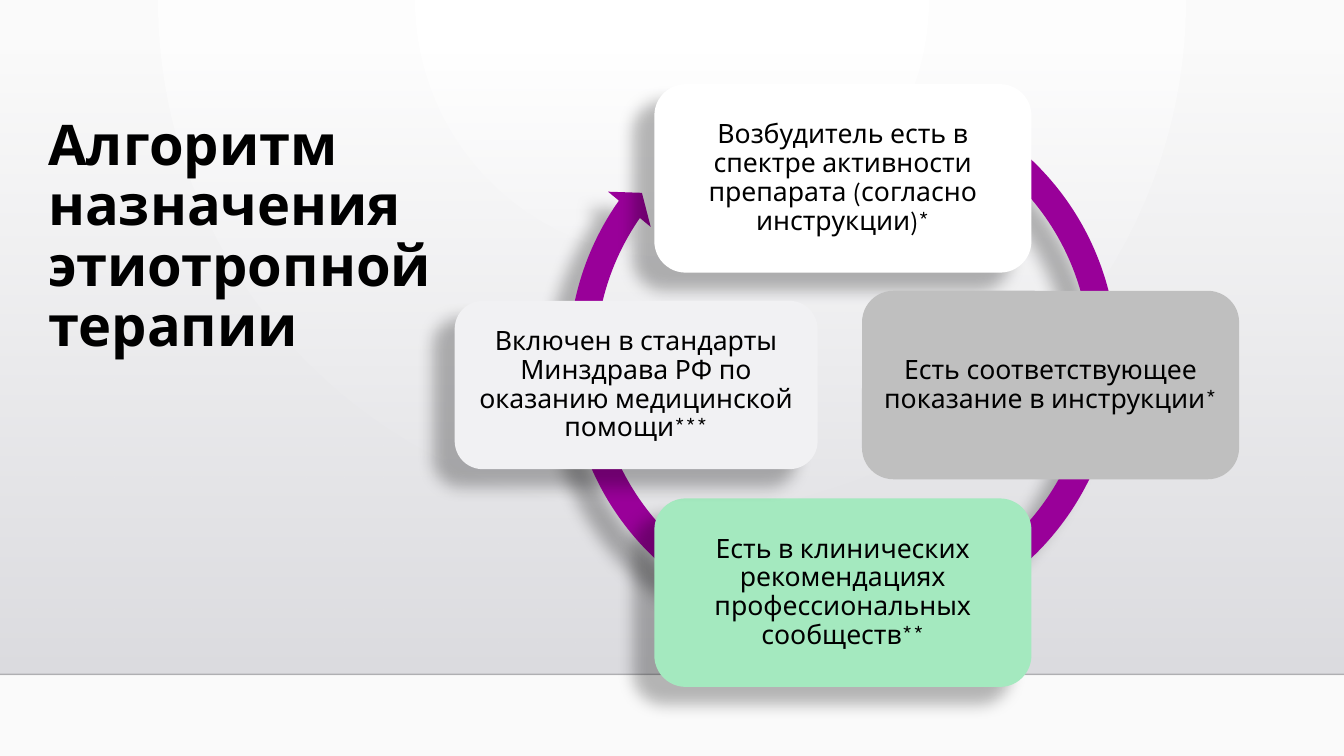
from dataclasses import dataclass

from lxml import etree
from pptx import Presentation
from pptx.dml.color import RGBColor
from pptx.enum.shapes import MSO_CONNECTOR, MSO_SHAPE
from pptx.enum.text import MSO_ANCHOR, MSO_AUTO_SIZE, PP_ALIGN
from pptx.oxml import parse_xml
from pptx.oxml.ns import nsdecls, qn
from pptx.util import Inches, Pt

ROUND_RECT = MSO_SHAPE.ROUNDED_RECTANGLE
RECT = MSO_SHAPE.RECTANGLE
CIRCULAR_ARROW = MSO_SHAPE.CIRCULAR_ARROW
STRAIGHT = MSO_CONNECTOR.STRAIGHT
LEFT, CENTER = PP_ALIGN.LEFT, PP_ALIGN.CENTER
TOP, MIDDLE = MSO_ANCHOR.TOP, MSO_ANCHOR.MIDDLE
GROW = MSO_AUTO_SIZE.SHAPE_TO_FIT_TEXT

FONT = "League Spartan"
SLIDE_W, SLIDE_H = 13.33, 7.5
HORIZON_Y = 6.69
COLORS = {
    "text": "000000",
    "ring": "990099",
    "spectrum": "FFFFFF",
    "indication": "BFBFBF",
    "guidelines": "A4E9BF",
    "standards": "F1F1F3",
    "bg_center": "FFFFFF",
    "bg_edge": "FAFAFA",
    "wall_top": "DCDCE0",
    "wall_bottom": "DEDEE2",
    "horizon": "000001",
}


@dataclass(frozen=True)
class Step:
    text: str
    color: str
    cx: float
    cy: float
    w: float = 3.74
    h: float = 1.87
    shadow: bool = True


RING_X = 8.36
STEPS = [
    Step("Возбудитель есть в спектре активности препарата (согласно инструкции)*",
         "spectrum", RING_X, 1.77),
    Step("Есть соответствующее показание в инструкции*",
         "indication", 10.42, 3.82, shadow=False),
    Step("Есть в клинических рекомендациях профессиональных сообществ**",
         "guidelines", RING_X, 5.88),
    Step("Включен в стандарты Минздрава РФ по оказанию медицинской помощи***",
         "standards", 6.31, 3.82, w=3.6, h=1.67),
]


def rgb(name: str) -> RGBColor:
    return RGBColor.from_string(COLORS[name])


def gradient(first: str, last: str, direction: str, alphas=(100, 100)):
    """Return a two-stop gradFill; direction is its a:lin or a:path element."""
    stops = "".join(
        f'<a:gs pos="{pos}"><a:srgbClr val="{COLORS[name]}">'
        f'<a:alpha val="{alpha * 1000}"/></a:srgbClr></a:gs>'
        for pos, name, alpha in zip((0, 100000), (first, last), alphas))
    return parse_xml(f'<a:gradFill {nsdecls("a")} rotWithShape="1">'
                     f'<a:gsLst>{stops}</a:gsLst>{direction}</a:gradFill>')


def replace_solid_fill(parent, fill) -> None:
    solid = parent.find(qn("a:solidFill"))
    parent.replace(solid, fill)


def add_shadow(sp) -> None:
    sp._element.spPr.append(parse_xml(
        f'<a:effectLst {nsdecls("a")}><a:outerShdw blurRad="{Pt(11.8)}" '
        f'dist="{Pt(19.7)}" dir="{141 * 60000}" algn="ctr" rotWithShape="0">'
        f'<a:srgbClr val="{COLORS["text"]}"><a:alpha val="28000"/></a:srgbClr>'
        '</a:outerShdw></a:effectLst>'))


def add_filled(slide, kind, x: float, y: float, w: float, h: float,
               color: str, shadow: bool = False):
    sp = slide.shapes.add_shape(kind, Inches(x), Inches(y), Inches(w), Inches(h))
    sp.fill.solid()
    sp.fill.fore_color.rgb = rgb(color)
    sp.line.fill.background()
    if shadow:
        add_shadow(sp)
    else:
        sp.shadow.inherit = False
    return sp


def write(sp, text: str, *, size: float, bold: bool = False, align=LEFT,
          anchor=TOP, inset_x: float = 0.1, inset_y: float = 0.05) -> None:
    tf = sp.text_frame
    tf.word_wrap = True
    tf.vertical_anchor = anchor
    tf.margin_left = tf.margin_right = Inches(inset_x)
    tf.margin_top = tf.margin_bottom = Inches(inset_y)
    p = tf.paragraphs[0]
    p.alignment = align
    p.line_spacing = 0.9
    r = p.add_run()
    r.text = text
    r.font.name = FONT
    r.font.size = Pt(size)
    r.font.bold = bold
    r.font.color.rgb = rgb("text")


def add_backdrop(slide) -> None:
    fill = slide.background.fill
    fill.solid()
    bg_pr = slide._element.cSld.find(qn("p:bg")).find(qn("p:bgPr"))
    replace_solid_fill(bg_pr, gradient(
        "bg_center", "bg_edge",
        '<a:path path="circle"><a:fillToRect l="43000" t="0" r="43000" '
        'b="100000"/></a:path>'))

    wall = add_filled(slide, RECT, 0, 0.51, SLIDE_W, HORIZON_Y - 0.51, "wall_top")
    replace_solid_fill(wall._element.spPr, gradient(
        "wall_top", "wall_bottom", '<a:lin ang="5400000" scaled="0"/>', (0, 100)))

    horizon = slide.shapes.add_connector(
        STRAIGHT, 0, Inches(HORIZON_Y), Inches(SLIDE_W), Inches(HORIZON_Y))
    horizon.line.width = Pt(1)
    horizon.line.color.rgb = rgb("horizon")
    color = horizon.line._ln.find(qn("a:solidFill"))[0]
    etree.SubElement(color, qn("a:alpha")).set("val", "20000")
    etree.SubElement(horizon._element.spPr, qn("a:effectLst"))


def add_ring(slide) -> None:
    size = 5.72
    ring = add_filled(slide, CIRCULAR_ARROW, RING_X - size / 2, 0.7, size, size,
                      "ring", shadow=True)
    for i, value in enumerate((0.047, 2.729, 129.008, 179.837, 0.048)):
        ring.adjustments[i] = value


def add_step(slide, step: Step) -> None:
    sp = add_filled(slide, ROUND_RECT, step.cx - step.w / 2, step.cy - step.h / 2,
                    step.w, step.h, step.color, step.shadow)
    write(sp, step.text, size=19, align=CENTER, anchor=MIDDLE,
          inset_x=0.08, inset_y=0.08)


def main() -> None:
    prs = Presentation()
    prs.slide_width, prs.slide_height = Inches(SLIDE_W), Inches(SLIDE_H)
    slide = prs.slides.add_slide(prs.slide_layouts[6])

    add_backdrop(slide)
    title = slide.shapes.add_textbox(
        Inches(0.38), Inches(1.11), Inches(5.12), Inches(2.52))
    write(title, "Алгоритм назначения этиотропной терапии", size=40, bold=True)
    title.text_frame.auto_size = GROW
    add_ring(slide)
    for step in STEPS:
        add_step(slide, step)

    prs.save("out.pptx")


if __name__ == "__main__":
    main()
